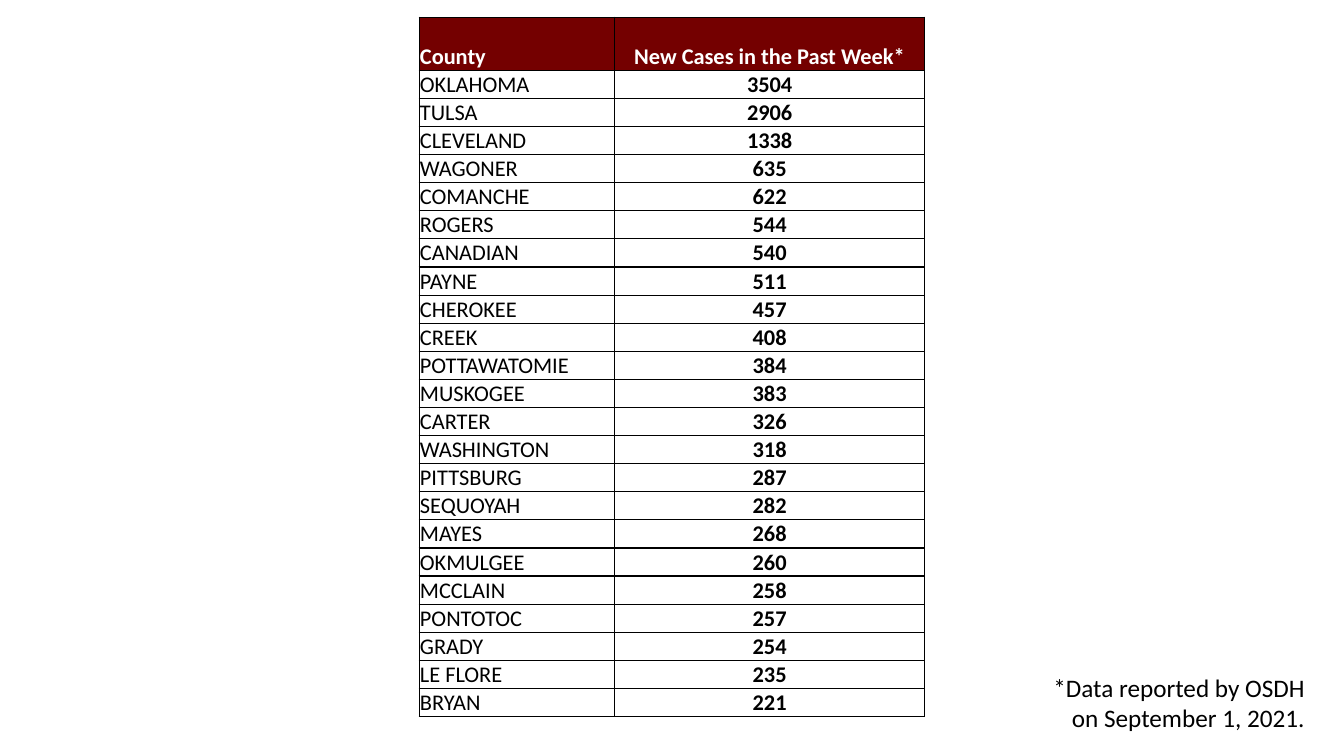
from dataclasses import dataclass
from typing import NamedTuple

from lxml.etree import SubElement
from pptx import Presentation
from pptx.dml.color import RGBColor as RGB
from pptx.enum.text import MSO_ANCHOR as Anchor, MSO_AUTO_SIZE as AutoSize, PP_ALIGN as Align
from pptx.oxml.ns import qn
from pptx.util import Pt


@dataclass(frozen=True)
class Theme:
    font: str = "Calibri"
    ink: RGB = RGB(0x00, 0x00, 0x00)
    header_ink: RGB = RGB(0xFF, 0xFF, 0xFF)
    header_fill: RGB = RGB(0x74, 0x00, 0x00)
    table_size: float = 16
    note_size: float = 18
    border: float = 1


class County(NamedTuple):
    name: str
    new_cases: int


THEME = Theme()
HEADINGS = ("County", "New Cases in the Past Week*")
COUNTIES = [
    County("OKLAHOMA", 3504),
    County("TULSA", 2906),
    County("CLEVELAND", 1338),
    County("WAGONER", 635),
    County("COMANCHE", 622),
    County("ROGERS", 544),
    County("CANADIAN", 540),
    County("PAYNE", 511),
    County("CHEROKEE", 457),
    County("CREEK", 408),
    County("POTTAWATOMIE", 384),
    County("MUSKOGEE", 383),
    County("CARTER", 326),
    County("WASHINGTON", 318),
    County("PITTSBURG", 287),
    County("SEQUOYAH", 282),
    County("MAYES", 268),
    County("OKMULGEE", 260),
    County("MCCLAIN", 258),
    County("PONTOTOC", 257),
    County("GRADY", 254),
    County("LE FLORE", 235),
    County("BRYAN", 221),
]
COLUMN_WIDTHS = (139.5, 221.5)
HEADER_HEIGHT = 38
ROW_HEIGHT = 19.97


def add_run(p, text: str, size: float, color: RGB, bold: bool = False) -> None:
    r = p.add_run()
    r.text = text
    r.font.name = THEME.font
    r.font.size = Pt(size)
    r.font.bold = bold
    r.font.color.rgb = color


def add_borders(cell) -> None:
    """Outline all four sides; call before the fill, which must come after the lines."""
    tc_pr = cell._tc.get_or_add_tcPr()
    for side in ("a:lnL", "a:lnR", "a:lnT", "a:lnB"):
        line = SubElement(tc_pr, qn(side), w=str(Pt(THEME.border)))
        fill = SubElement(line, qn("a:solidFill"))
        SubElement(fill, qn("a:srgbClr"), val=str(THEME.ink))


def fill_cell(cell, text: str, is_header: bool, is_count: bool) -> None:
    add_borders(cell)
    if is_header:
        cell.fill.solid()
        cell.fill.fore_color.rgb = THEME.header_fill
    else:
        cell.fill.background()
    cell.margin_left = cell.margin_right = cell.margin_top = Pt(0.5)
    cell.margin_bottom = Pt(0)
    cell.vertical_anchor = Anchor.BOTTOM
    p = cell.text_frame.paragraphs[0]
    p.alignment = Align.CENTER if is_count else Align.LEFT
    color = THEME.header_ink if is_header else THEME.ink
    add_run(p, text, THEME.table_size, color, bold=is_header or is_count)


def add_case_table(s) -> None:
    rows = [HEADINGS, *COUNTIES]
    height = HEADER_HEIGHT + ROW_HEIGHT * len(COUNTIES)
    table = s.shapes.add_table(len(rows), len(HEADINGS), Pt(299.5), Pt(12.25),
                               Pt(sum(COLUMN_WIDTHS)), Pt(height)).table
    table.horz_banding = False
    for column, width in zip(table.columns, COLUMN_WIDTHS):
        column.width = Pt(width)
    for i, row in enumerate(rows):
        table.rows[i].height = Pt(ROW_HEIGHT if i else HEADER_HEIGHT)
        for j, value in enumerate(row):
            fill_cell(table.cell(i, j), str(value), is_header=i == 0, is_count=j == 1)


def add_source_note(s) -> None:
    sp = s.shapes.add_textbox(Pt(738), Pt(476.5), Pt(201), Pt(51))
    tf = sp.text_frame
    tf.word_wrap = True
    tf.auto_size = AutoSize.SHAPE_TO_FIT_TEXT
    p = tf.paragraphs[0]
    p.alignment = Align.RIGHT
    add_run(p, "*Data reported by OSDH on September 1, 2021.", THEME.note_size, THEME.ink)


def main() -> None:
    prs = Presentation()
    prs.slide_width, prs.slide_height = Pt(960), Pt(540)
    s = prs.slides.add_slide(prs.slide_layouts[6])
    add_case_table(s)
    add_source_note(s)
    prs.save("out.pptx")


if __name__ == "__main__":
    main()
